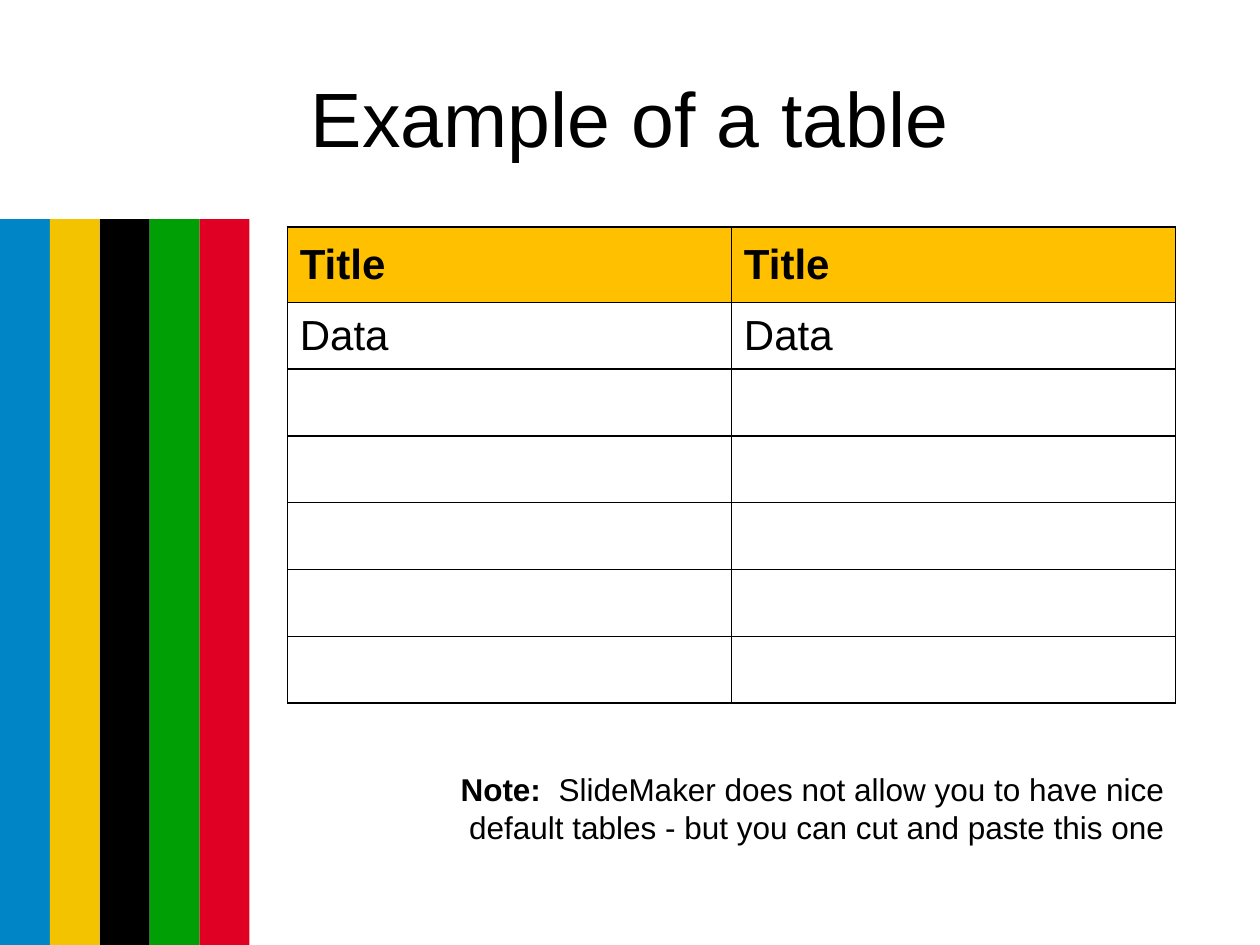
import dataclasses
import typing

import lxml.etree
import pptx
import pptx.dml.color
import pptx.enum.shapes
import pptx.enum.text
import pptx.oxml.ns
import pptx.util

RGB = pptx.dml.color.RGBColor
BLUE = RGB(0x00, 0x85, 0xC7)
YELLOW = RGB(0xF4, 0xC3, 0x00)
BLACK = RGB(0x00, 0x00, 0x00)
GREEN = RGB(0x00, 0x9F, 0x06)
RED = RGB(0xDF, 0x00, 0x24)
AMBER = RGB(0xFF, 0xC0, 0x00)
WHITE = RGB(0xFF, 0xFF, 0xFF)

WIDE, HIGH = 10, 7.5
FONT = "Arial"
ALIGN = pptx.enum.text.PP_ALIGN
ANCHOR = pptx.enum.text.MSO_ANCHOR


@dataclasses.dataclass(frozen=True)
class Box:
    """A frame in inches."""
    left: float
    top: float
    width: float
    height: float

    def frame(self) -> list[int]:
        return [pptx.util.Inches(n) for n in dataclasses.astuple(self)]


@dataclasses.dataclass(frozen=True)
class Span:
    text: str
    bold: typing.Optional[bool] = None


@dataclasses.dataclass(frozen=True)
class Label:
    box: Box
    spans: tuple[Span, ...]
    size: int
    align: ALIGN
    anchor: ANCHOR


@dataclasses.dataclass(frozen=True)
class Row:
    texts: tuple[str, ...]
    height: float = 0.53
    fill: RGB = WHITE
    bold: bool = False


STRIPES = (BLUE, YELLOW, BLACK, GREEN, RED)
BAND = Box(0, 1.74, 1.98, HIGH - 1.74)

LABELS = (
    Label(Box(0.05 * WIDE, 0.04 * HIGH, 0.9 * WIDE, 1.25),
          (Span("Example of a table"),), 44, ALIGN.CENTER, ANCHOR.MIDDLE),
    Label(Box(2.88, 6.06, 6.46, 0.71),
          (Span("Note:  ", True),
           Span("SlideMaker does not allow you to have nice default tables"
                " - but you can cut and paste this one", False)),
          18, ALIGN.RIGHT, ANCHOR.TOP),
)

ROWS = (
    Row(("Title", "Title"), 0.6, AMBER, True),
    Row(("Data", "Data")),
    *[Row(("", ""))] * 5,
)
GRID = Box(2.28, 1.8, 7.05, sum(row.height for row in ROWS))


def set_font(para, size: int, bold: typing.Optional[bool] = None) -> None:
    para.font.name = FONT
    para.font.size = pptx.util.Pt(size)
    para.font.color.rgb = BLACK
    para.font.bold = bold


def draw_stripes(slide, band: Box, colors: tuple[RGB, ...]) -> None:
    step = band.width / len(colors)
    for i, color in enumerate(colors):
        box = Box(band.left + i * step, band.top, step, band.height)
        stripe = slide.shapes.add_shape(
            pptx.enum.shapes.MSO_SHAPE.RECTANGLE, *box.frame())
        stripe.shadow.inherit = False
        stripe.fill.solid()
        stripe.fill.fore_color.rgb = color
        stripe.line.fill.background()


def draw_label(slide, label: Label) -> None:
    frame = slide.shapes.add_textbox(*label.box.frame()).text_frame
    frame.word_wrap = True
    frame.vertical_anchor = label.anchor
    para = frame.paragraphs[0]
    para.alignment = label.align
    set_font(para, label.size)
    for span in label.spans:
        run = para.add_run()
        run.text = span.text
        run.font.bold = span.bold


def add_edges(cell) -> None:
    """Rule all four sides; lines must come before the fill."""
    props = cell._tc.get_or_add_tcPr()
    name = pptx.oxml.ns.qn
    for i, side in enumerate(("a:lnL", "a:lnR", "a:lnT", "a:lnB")):
        line = lxml.etree.Element(name(side), w=str(pptx.util.Pt(1)))
        fill = lxml.etree.SubElement(line, name("a:solidFill"))
        lxml.etree.SubElement(fill, name("a:srgbClr"), val=str(BLACK))
        props.insert(i, line)


def draw_table(slide, box: Box, rows: tuple[Row, ...]) -> None:
    count = len(rows[0].texts)
    table = slide.shapes.add_table(len(rows), count, *box.frame()).table
    table.first_row = table.horz_banding = False
    for col in table.columns:
        col.width = pptx.util.Inches(box.width / count)
    for r, row in enumerate(rows):
        table.rows[r].height = pptx.util.Inches(row.height)
        for c, text in enumerate(row.texts):
            cell = table.cell(r, c)
            cell.vertical_anchor = ANCHOR.MIDDLE
            cell.fill.solid()
            cell.fill.fore_color.rgb = row.fill
            add_edges(cell)
            if text:
                cell.text = text
            set_font(cell.text_frame.paragraphs[0], 24, row.bold)


def main() -> None:
    deck = pptx.Presentation()
    deck.slide_width = pptx.util.Inches(WIDE)
    deck.slide_height = pptx.util.Inches(HIGH)
    slide = deck.slides.add_slide(deck.slide_layouts[6])

    # Side band
    draw_stripes(slide, BAND, STRIPES)
    # Heading and note
    for label in LABELS:
        draw_label(slide, label)
    # Data table
    draw_table(slide, GRID, ROWS)

    deck.save("out.pptx")


if __name__ == "__main__":
    main()
